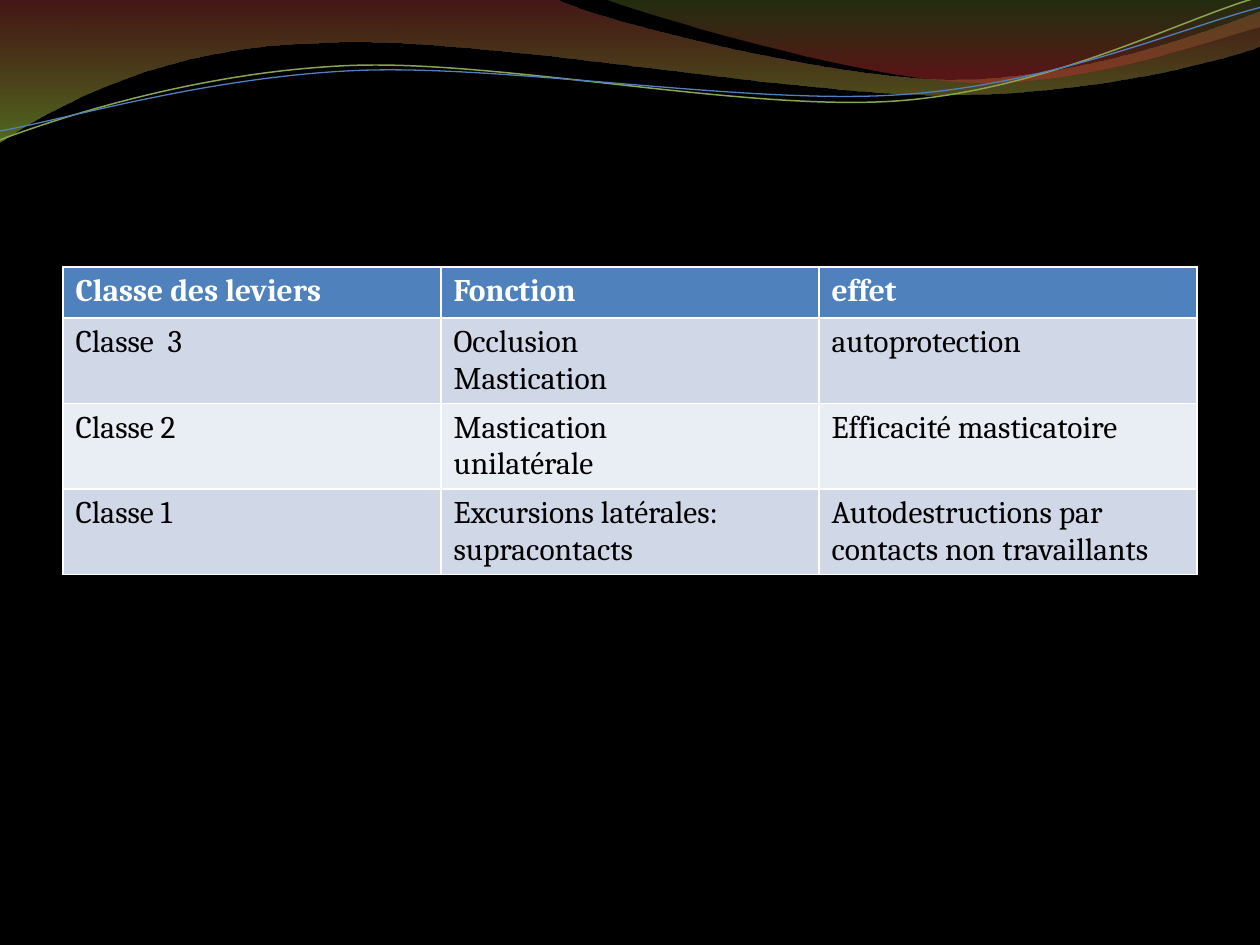
import math

import pptx
import pptx.util
import pptx.dml.color
import pptx.oxml
import pptx.oxml.ns

RGB = pptx.dml.color.RGBColor
BLACK = RGB(0x00, 0x00, 0x00)
WHITE = RGB(0xFF, 0xFF, 0xFF)
BLUE = RGB(0x4F, 0x81, 0xBD)
BAND_DARK = RGB(0xD0, 0xD8, 0xE8)
BAND_LIGHT = RGB(0xE9, 0xED, 0xF4)
GREEN_LINE = RGB(0x89, 0xA5, 0x4F)
BRICK = RGB(0x97, 0x33, 0x30)
LIME = RGB(0x95, 0xC2, 0x38)
OLIVE = RGB(0x76, 0x95, 0x37)
RED = RGB(0xBE, 0x33, 0x30)

# Waves: a start point, then points (x, y) for lines or six numbers for Bézier curves
WIDE_RIBBON = [(0, 0), (4.4, -0.01), (4.76, 0.17, 6.64, 0.63, 7.58, 0.63),
               (8.53, 0.63, 9.58, 0.26, 10, 0.09), (10.01, 0.36),
               (9.83, 0.44, 8.7, 0.76, 7.46, 0.75), (6.22, 0.75, 3.82, 0.28, 2.57, 0.34),
               (1.29, 0.36, 0.46, 0.83, -0.01, 1.13), (0, 0)]
RIGHT_RIBBON = [(4.79, -0.01), (5.09, 0.11, 6.82, 0.62, 7.69, 0.65),
                (8.56, 0.69, 9.61, 0.32, 10, 0.21), (10, 0), (4.79, -0.01)]
GREEN_WAVE = [(0, 1.11), (0.48, 0.93, 1.58, 0.57, 2.77, 0.52),
              (3.95, 0.47, 5.93, 0.89, 7.13, 0.8), (8.33, 0.71, 9.38, 0.15, 9.98, -0.02)]
BLUE_WAVE = [(0, 1.04), (0.47, 0.96, 1.64, 0.61, 2.83, 0.56),
             (4.03, 0.51, 5.97, 0.84, 7.17, 0.75), (8.36, 0.67, 9.41, 0.21, 10, 0.06)]

ROWS = [
    ["Classe des leviers", "Fonction", "effet"],
    ["Classe  3", "Occlusion\nMastication", "autoprotection"],
    ["Classe 2", "Mastication\nunilatérale", "Efficacité masticatoire"],
    ["Classe 1", "Excursions latérales:\nsupracontacts",
     "Autodestructions par contacts non travaillants"],
]


def pairs(seg):
    return list(zip(seg[::2], seg[1::2]))


def turn(seg, center, degrees):
    """Rotate every point of a segment clockwise about a centre."""
    cx, cy = center
    sin, cos = math.sin(math.radians(degrees)), math.cos(math.radians(degrees))
    turned = [(cx + (x - cx) * cos - (y - cy) * sin, cy + (x - cx) * sin + (y - cy) * cos)
              for x, y in pairs(seg)]
    return sum(turned, ())


class Deck:
    """Style and current slide, on a grid of 10 columns by 7.5 rows."""
    COLS, GRID_ROWS = 10, 7.5
    TILT = 2.7  # degrees the waves lean to the left

    def __init__(self):
        self.prs = pptx.Presentation()
        self.prs.slide_width = pptx.util.Inches(10)
        self.prs.slide_height = pptx.util.Inches(7.5)
        self.s = self.prs.slides.add_slide(self.prs.slide_layouts[6])
        self.font = {"name": "Cambria", "size": pptx.util.Pt(18)}

    def x(self, cols):
        return round(self.prs.slide_width * cols / self.COLS)

    def y(self, rows):
        return round(self.prs.slide_height * rows / self.GRID_ROWS)

    def background(self, color):
        fill = self.s.background.fill
        fill.solid()
        fill.fore_color.rgb = color

    def outline(self, segments, close):
        pts = [(self.x(a), self.y(b)) for seg in segments for a, b in pairs(seg)]
        fb = self.s.shapes.build_freeform(*pts[0], scale=1.0)
        fb.add_line_segments(pts[1:], close=close)
        sp = fb.convert_to_shape()
        sp.shadow.inherit = False
        # Join each three points of a curve into one Bézier element
        lines = iter(sp._element.spPr.findall(".//" + pptx.oxml.ns.qn("a:lnTo")))
        for seg in segments[1:]:
            first = next(lines)
            if len(seg) == 6:
                curve = pptx.oxml.parse_xml(f'<a:cubicBezTo {pptx.oxml.ns.nsdecls("a")}/>')
                first.addprevious(curve)
                for line in (first, next(lines), next(lines)):
                    curve.append(line[0])
                    line.getparent().remove(line)
        return sp

    def ribbon(self, segments, stops):
        """Borderless shape with a top-down gradient; stops are (position, colour, opacity %)."""
        sp = self.outline(segments, True)
        sp.line.fill.background()
        sp.fill.gradient()
        sp.fill.gradient_angle = 270
        for stop, (position, color, _) in zip(sp.fill.gradient_stops, stops):
            stop.position = position
            stop.color.rgb = color
        clrs = sp._element.spPr.findall(".//" + pptx.oxml.ns.qn("a:srgbClr"))
        for clr, (_, _, opacity) in zip(clrs, stops):
            clr.append(pptx.oxml.parse_xml(
                f'<a:alpha {pptx.oxml.ns.nsdecls("a")} val="{opacity * 1000}"/>'))

    def wave(self, segments, center, color, width):
        sp = self.outline([turn(seg, center, self.TILT) for seg in segments], False)
        sp.rotation = 360 - self.TILT
        sp.fill.background()
        sp.line.color.rgb = color
        sp.line.width = pptx.util.Pt(width)

    def table(self, rows, left, top, col_width, row_height, height):
        n = len(rows[0])
        frame = self.s.shapes.add_table(len(rows), n, self.x(left), self.y(top),
                                        self.x(col_width * n), self.y(row_height * len(rows)))
        frame.height = self.y(height)
        for r, texts in enumerate(rows):
            head = r == 0
            fill = BLUE if head else (BAND_LIGHT, BAND_DARK)[r % 2]
            for c, text in enumerate(texts):
                cell = frame.table.cell(r, c)
                cell.fill.solid()
                cell.fill.fore_color.rgb = fill
                cell.text = text
                for p in cell.text_frame.paragraphs:
                    font = p.runs[0].font
                    for key, value in {**self.font, "bold": head}.items():
                        setattr(font, key, value)
                    font.color.rgb = WHITE if head else BLACK


def main():
    deck = Deck()
    deck.background(BLACK)
    # Decorative waves along the top
    deck.ribbon(WIDE_RIBBON, [(0, BRICK, 45), (1, LIME, 55)])
    deck.ribbon(RIGHT_RIBBON, [(0, OLIVE, 30), (0.8, RED, 45)])
    deck.wave(GREEN_WAVE, (4.99, 0.58), GREEN_LINE, 0.85)
    deck.wave(BLUE_WAVE, (5, 0.59), BLUE, 0.75)
    # Lever classes, with rows of 29.2 points
    deck.table(ROWS, left=0.5, top=2.12, col_width=3, row_height=29.2 / 72, height=2.51)
    deck.prs.save("out.pptx")


if __name__ == "__main__":
    main()
